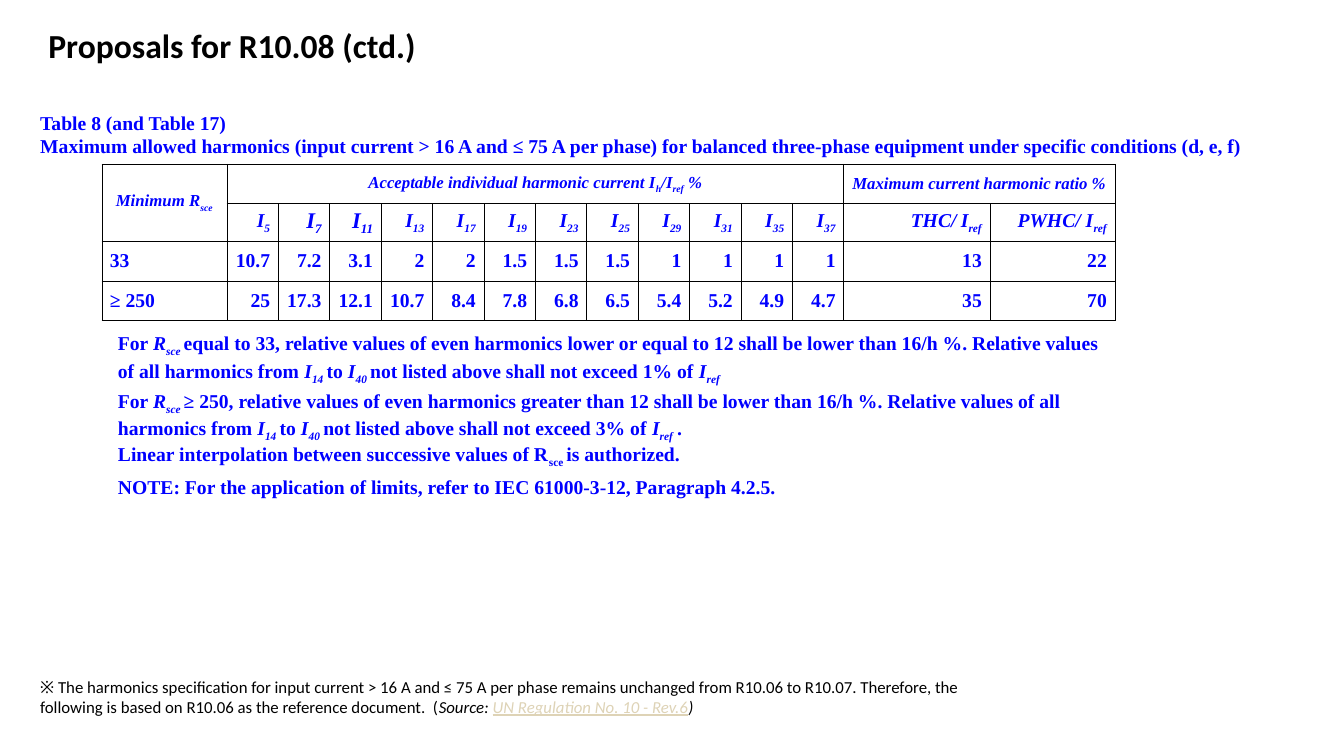
from lxml.etree import SubElement
from pptx import Presentation
from pptx.dml.color import RGBColor
from pptx.enum.text import MSO_ANCHOR as Anchor, PP_ALIGN as Align
from pptx.oxml.ns import qn
from pptx.util import Inches, Pt

BLACK = RGBColor(0, 0, 0)
BLUE = RGBColor(0, 0, 255)
SAND = RGBColor(0xDE, 0xD3, 0xB6)

TITLE = "Proposals for R10.08 (ctd.)"
CAPTION = [
    "Table 8 (and Table 17)",
    "Maximum allowed harmonics (input current > 16 A and ≤ 75 A per phase) "
    "for balanced three-phase equipment under specific conditions (d, e, f)",
]
ITALIC = {"italic": True}
SUB = {"italic": True, "baseline": -25}
UPRIGHT_SUB = {"baseline": -25}
GAP = {"italic": True, "baseline": -25, "size": Pt(16)}

GROUP_HEADERS = {
    0: [("Minimum R", ITALIC), ("sce", SUB)],
    1: [("Acceptable individual harmonic current I", ITALIC), ("h", SUB),
        ("/I", ITALIC), ("ref", SUB), (" %", ITALIC)],
    13: [("Maximum current harmonic ratio %", ITALIC)],
}
ORDERS = [5, 7, 11, 13, 17, 19, 23, 25, 29, 31, 35, 37]
LARGE_ORDERS = (7, 11)
RATIO_HEADERS = [
    [("THC/", ITALIC), (" ", {"italic": True, "size": Pt(12)}), ("I", ITALIC), ("ref", SUB)],
    [("PWHC/ I", ITALIC), ("ref", SUB)],
]
LIMITS = [
    "33 | 10.7 | 7.2 | 3.1 | 2 | 2 | 1.5 | 1.5 | 1.5 | 1 | 1 | 1 | 1 | 13 | 22",
    "≥ 250 | 25 | 17.3 | 12.1 | 10.7 | 8.4 | 7.8 | 6.8 | 6.5 | 5.4 | 5.2 | 4.9 | 4.7 | 35 | 70",
]
EVEN_HARMONICS = [
    ("equal to 33, relative values of even harmonics lower or equal to 12 shall be "
     "lower than 16/h %. Relative values of all harmonics from ", "1%", []),
    ("≥ 250, relative values of even harmonics greater than 12 shall be "
     "lower than 16/h %. Relative values of all harmonics from ", "3%", [(" .", ITALIC)]),
]
CLOSING_NOTES = [
    [("Linear interpolation between successive values of R", {}), ("sce ", UPRIGHT_SUB),
     ("is authorized.", {})],
    [("NOTE: For the application of limits, refer to IEC 61000-3-12, Paragraph 4.2.5.", {})],
]
FOOTNOTE = [
    ("※ The harmonics specification for input current > 16 A and ≤ 75 A per phase remains "
     "unchanged from R10.06 to R10.07. Therefore, the following is based on R10.06 as the "
     "reference document.  (", {}),
    ("Source: ", ITALIC),
    ("UN Regulation No. 10 - Rev.6", {"italic": True, "underline": True, "color": SAND}),
    (")", ITALIC),
]
COLUMN_WIDTHS = [1.24] + [0.51] * len(ORDERS) + [1.45, 1.24]
ROW_HEIGHTS = [0.39, 0.37, 0.4, 0.39, 1.9]
NO_STYLE = "{2D5ABB26-0587-4C30-8999-92F81FD0307C}"

TITLE_FONT = {"name": "Calibri", "size": Pt(24), "bold": True, "color": BLACK}
FOOT_FONT = {"name": "Calibri", "size": Pt(12), "color": BLACK}
BODY_FONT = {"name": "Times New Roman", "size": Pt(14), "bold": True, "color": BLUE}
HEAD_FONT = {**BODY_FONT, "size": Pt(12)}
LARGE_FONT = {**BODY_FONT, "size": Pt(16)}
CELL_SPACING = {"space_before": Pt(2), "space_after": Pt(2)}


def write(paragraph, runs, font, **layout):
    for name, value in layout.items():
        setattr(paragraph, name, value)
    for text, changes in runs:
        run = paragraph.add_run()
        run.text = text
        for name, value in {**font, **changes}.items():
            if name == "color":
                run.font.color.rgb = value
            elif name == "baseline":
                run._r.get_or_add_rPr().set("baseline", str(value * 1000))
            else:
                setattr(run.font, name, value)


def write_cell(cell, paragraphs, font, layouts):
    frame = cell.text_frame
    for index, (runs, layout) in enumerate(zip(paragraphs, layouts)):
        paragraph = frame.add_paragraph() if index else frame.paragraphs[0]
        write(paragraph, runs, font, **layout)
        properties = paragraph._p.get_or_add_pPr()
        for side in ("marL", "marR"):
            properties.set(side, str(Inches(0.08)))
        properties.set("indent", "0")


def format_cell(cell, sides):
    margins = ("margin_left", "margin_right", "margin_top", "margin_bottom")
    for name in margins:
        setattr(cell, name, 0)
    cell.vertical_anchor = Anchor.MIDDLE
    properties = cell._tc.get_or_add_tcPr()
    for side in sides:
        line = SubElement(properties, qn(f"a:ln{side}"), w=str(Pt(0.5)))
        fill = SubElement(line, qn("a:solidFill"))
        SubElement(fill, qn("a:srgbClr"), val=str(BLACK))
    cell.fill.background()


def add_text(slide, left, top, width, height, paragraphs, font):
    shape = slide.shapes.add_textbox(*map(Inches, (left, top, width, height)))
    frame = shape.text_frame
    frame.word_wrap = True
    for index, runs in enumerate(paragraphs):
        write(frame.add_paragraph() if index else frame.paragraphs[0], runs, font)
    return frame


def add_limits_table(slide):
    shape = slide.shapes.add_table(
        len(ROW_HEIGHTS), len(COLUMN_WIDTHS), Inches(1.01), Inches(1.63),
        Inches(sum(COLUMN_WIDTHS)), Inches(sum(ROW_HEIGHTS)))
    table = shape.table
    table.first_row = table.horz_banding = False
    table._tbl.tblPr.find(qn("a:tableStyleId")).text = NO_STYLE
    for column, width in zip(table.columns, COLUMN_WIDTHS):
        column.width = Inches(width)
    for row, height in zip(table.rows, ROW_HEIGHTS):
        row.height = Inches(height)
    notes_row = len(ROW_HEIGHTS) - 1
    for row_index, row in enumerate(table.rows):
        for cell in row.cells:
            format_cell(cell, "T" if row_index == notes_row else "LRTB")
    for start, end in [((0, 0), (1, 0)), ((0, 1), (0, 12)), ((0, 13), (0, 14)),
                       ((notes_row, 0), (notes_row, 14))]:
        table.cell(*start).merge(table.cell(*end))

    centred = [{"alignment": Align.CENTER, **CELL_SPACING}]
    right = [{"alignment": Align.RIGHT, **CELL_SPACING}]
    for column, runs in GROUP_HEADERS.items():
        write_cell(table.cell(0, column), [runs], HEAD_FONT, centred)
    for column, order in enumerate(ORDERS, 1):
        font = LARGE_FONT if order in LARGE_ORDERS else BODY_FONT
        write_cell(table.cell(1, column), [[("I", ITALIC), (str(order), SUB)]], font, right)
    for column, runs in enumerate(RATIO_HEADERS, len(ORDERS) + 1):
        write_cell(table.cell(1, column), [runs], BODY_FONT, right)
    for row, values in enumerate(LIMITS, 2):
        for column, value in enumerate(values.split(" | ")):
            layouts = right if column else [CELL_SPACING]
            write_cell(table.cell(row, column), [[(value, {})]], BODY_FONT, layouts)

    notes = [
        [("For ", {}), ("R", ITALIC), ("sce ", SUB), (condition, {}),
         ("I", ITALIC), ("14", SUB), (" ", GAP), ("to ", {}),
         ("I", ITALIC), ("40", SUB), (" ", GAP),
         (f"not listed above shall not exceed {limit} of ", {}),
         ("I", ITALIC), ("ref", SUB), *ending]
        for condition, limit, ending in EVEN_HARMONICS
    ]
    layouts = [{"space_before": Pt(3)}] * len(notes) + [{"space_after": Pt(6)}] * len(CLOSING_NOTES)
    notes_cell = table.cell(notes_row, 0)
    notes_cell.margin_left = Inches(0.08)
    write_cell(notes_cell, notes + CLOSING_NOTES, BODY_FONT, layouts)


def main():
    presentation = Presentation()
    presentation.slide_width = Inches(13.33)
    presentation.slide_height = Inches(7.5)
    slide = presentation.slides.add_slide(presentation.slide_layouts[5])
    title = slide.shapes.title
    box = {"left": 0.38, "top": 0.2, "width": 10.65, "height": 0.47}
    for name, value in box.items():
        setattr(title, name, Inches(value))
    title.text_frame.vertical_anchor = Anchor.TOP
    write(title.text_frame.paragraphs[0], [(TITLE, {})], TITLE_FONT, alignment=Align.LEFT)

    caption = add_text(slide, 0.3, 1.04, 12.99, 0.61, [[(line, {})] for line in CAPTION], BODY_FONT)
    caption.vertical_anchor = Anchor.MIDDLE
    caption.margin_bottom = Inches(0.08)
    add_limits_table(slide)
    add_text(slide, 0.3, 6.66, 9.4, 0.5, [FOOTNOTE], FOOT_FONT)
    presentation.save("out.pptx")


if __name__ == "__main__":
    main()
